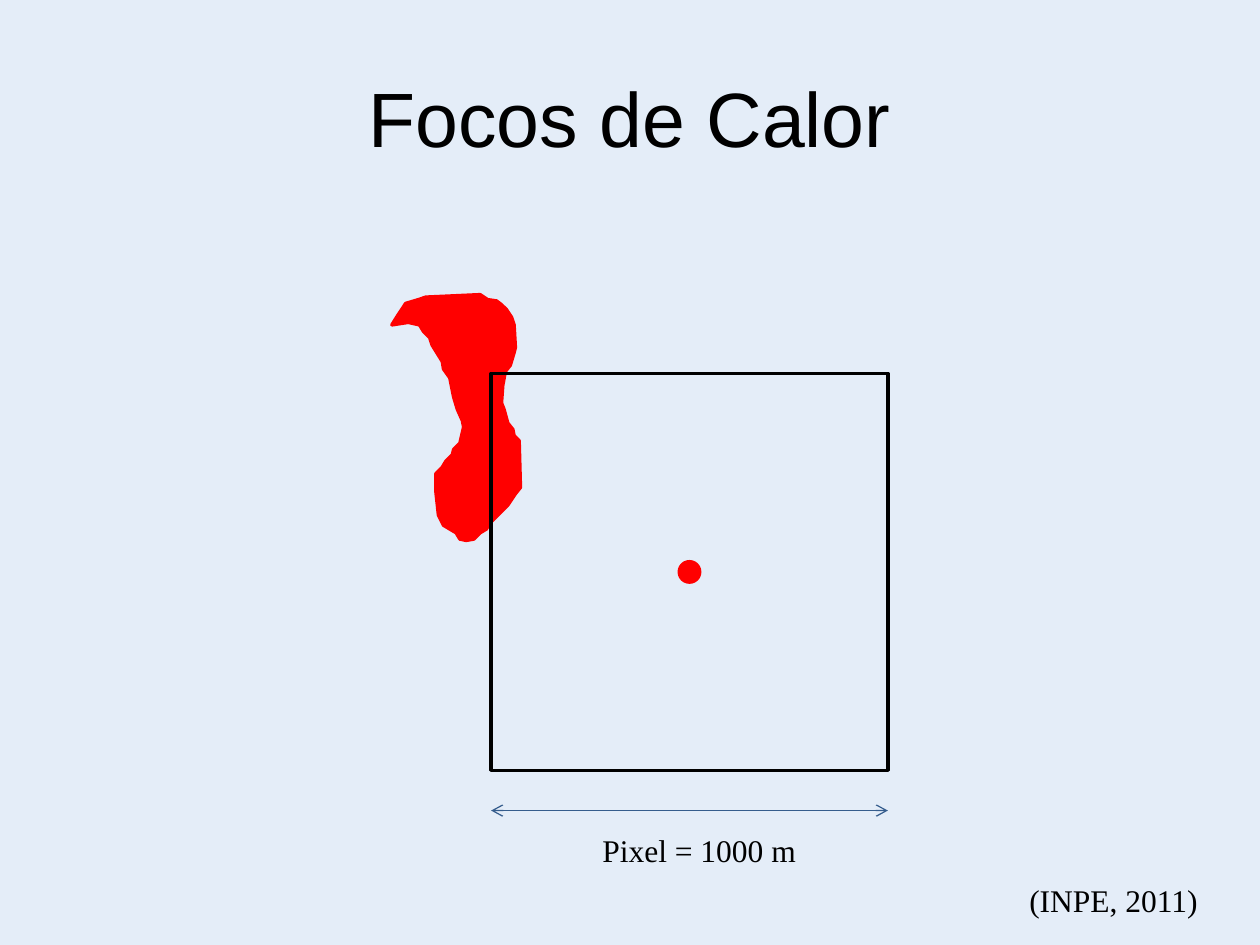
from pptx import Presentation
from pptx.dml.color import RGBColor as Rgb
from pptx.enum.shapes import MSO_CONNECTOR as Link, MSO_SHAPE as Kind
from pptx.enum.text import MSO_ANCHOR as Anchor, PP_ALIGN as Align
from pptx.oxml.ns import qn
from pptx.util import Cm, Pt
from lxml.etree import SubElement

HUES = {"back": "E4EDF8", "fire": "FF0000", "ink": "000000", "arrow": "355D8D"}
TITLE = {"name": "Arial", "size": Pt(44)}
NOTE = {"name": "Times New Roman", "size": Pt(18)}
UNIT = Cm(0.0254)
BURN = [
    (0, 24), (13, 22.5), (22, 24), (25, 29), (30, 34), (32, 40), (40, 53),
    (41, 59), (46, 66), (49, 81), (52, 91), (56, 100), (57, 105), (54, 118),
    (49, 123), (48, 127), (43, 132), (40, 137), (35, 142), (35, 157),
    (37, 175), (41, 183), (51, 189), (54, 194), (59, 195), (65, 194),
    (70, 189), (75, 186), (78, 181), (92, 167), (98, 158), (102, 153),
    (101, 116), (97, 112), (96, 107), (92, 102), (89, 91), (87, 86),
    (88, 72), (90, 61), (94, 56), (97, 46), (98, 42), (97, 24), (95, 18),
    (91, 12), (87, 8), (83, 5), (76, 4), (70, 0), (27, 2), (21, 4),
    (11, 7), (5, 16),
]


def hue(key):
    return Rgb.from_string(HUES[key])


def paint(shape, line, fill=None):
    shape.shadow.inherit = False
    shape.line.color.rgb = hue(line)
    shape.line.width = Pt(2)
    if fill:
        shape.fill.solid()
        shape.fill.fore_color.rgb = hue(fill)
    else:
        shape.fill.background()


def write(frame, text, style, align, wrap=True):
    frame.word_wrap = wrap
    para = frame.paragraphs[0]
    para.alignment = align
    run = para.add_run()
    run.text = text
    for key, value in style.items():
        setattr(run.font, key, value)
    run.font.color.rgb = hue("ink")


def head(slide, left, top, width, height):
    title = slide.shapes.title
    title.left, title.top = Cm(left), Cm(top)
    title.width, title.height = Cm(width), Cm(height)
    title.text_frame.vertical_anchor = Anchor.MIDDLE
    write(title.text_frame, "Focos de Calor", TITLE, Align.CENTER)


def label(slide, text, left, top, width, align, wrap=True):
    box = slide.shapes.add_textbox(Cm(left), Cm(top), Cm(width), Cm(1.03))
    write(box.text_frame, text, NOTE, align, wrap)


def scar(slide, left, top):
    pen = slide.shapes.build_freeform(*BURN[0], scale=UNIT)
    pen.add_line_segments(BURN[1:], close=True)
    paint(pen.convert_to_shape(Cm(left), Cm(top)), "fire", "fire")


def span(slide, left, top, width):
    arrow = slide.shapes.add_connector(
        Link.STRAIGHT, Cm(left), Cm(top), Cm(left + width), Cm(top))
    arrow.line.color.rgb = hue("arrow")
    arrow.line.width = Pt(0.75)
    line = arrow.line._get_or_add_ln()
    for end in ("a:headEnd", "a:tailEnd"):
        SubElement(line, qn(end), type="arrow")
    SubElement(arrow._element.spPr, qn("a:effectLst"))


def pixel(slide, left, top, side, dot=0.41):
    add = slide.shapes.add_shape
    frame = add(Kind.RECTANGLE, Cm(left), Cm(top), Cm(side), Cm(side))
    paint(frame, "ink")
    span(slide, left, top + side + 0.81, side)
    label(slide, "Pixel = 1000 m", left + 1.4, top + side + 1.09, 5.59,
          Align.CENTER)
    gap = (side - dot) / 2
    focus = add(Kind.OVAL, Cm(left + gap), Cm(top + gap), Cm(dot), Cm(dot))
    paint(focus, "fire", "fire")


def main():
    deck = Presentation()
    deck.slide_width, deck.slide_height = Cm(25.4), Cm(19.05)
    slide = deck.slides.add_slide(deck.slide_layouts[5])
    slide.background.fill.solid()
    slide.background.fill.fore_color.rgb = hue("back")
    head(slide, 1.27, 0.76, 22.86, 3.18)
    scar(slide, 7.9, 5.94)
    pixel(slide, 9.9, 7.53, 8)
    label(slide, "(INPE, 2011)", 20.5, 17.63, 3.94, Align.LEFT, False)
    deck.save("out.pptx")


if __name__ == "__main__":
    main()
